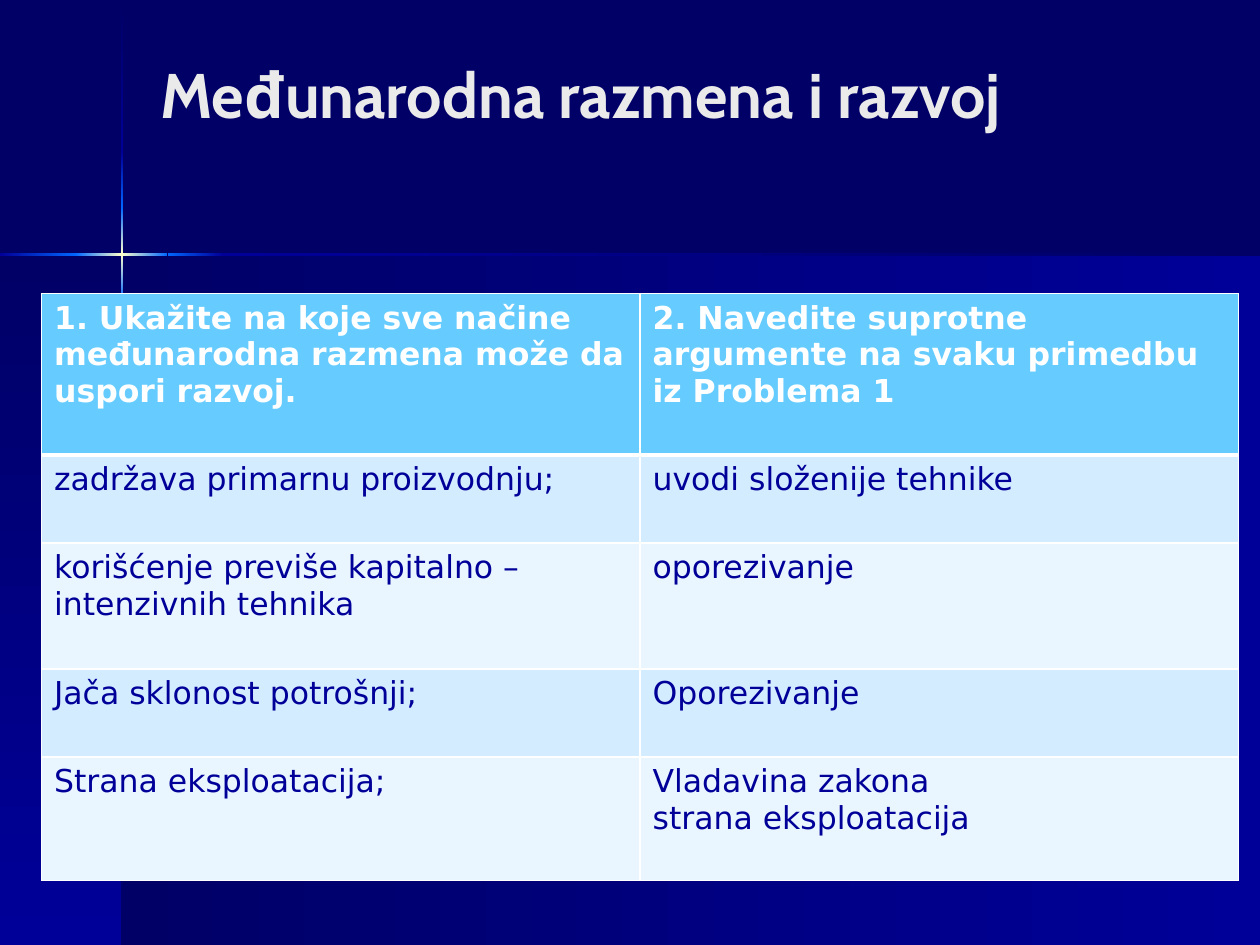
from copy import deepcopy
from pptx import Presentation
from pptx.dml.color import RGBColor
from pptx.enum import shapes, text
from pptx.oxml import ns
from pptx.util import Inches, Pt
from lxml import etree

NAVY = RGBColor(0x00, 0x00, 0x66)
BLUE = RGBColor(0x00, 0x00, 0x99)
AZURE = RGBColor(0x00, 0x66, 0xFF)
CREAM = RGBColor(0xFF, 0xFF, 0xCC)
WHITE = RGBColor(0xFF, 0xFF, 0xFF)
SILVER = RGBColor(0xEA, 0xEA, 0xEA)
SKY = RGBColor(0x66, 0xCC, 0xFF)
PALE = RGBColor(0xD3, 0xEC, 0xFF)
MIST = RGBColor(0xEA, 0xF6, 0xFF)


def write(frame, words, size=18, font="DejaVu Sans", color=BLUE, bold=False):
    frame.text = words
    para = frame.paragraphs[0]
    para.alignment = text.PP_ALIGN.LEFT
    for run in para.runs:
        run.font.size = Pt(size)
        run.font.name = font
        run.font.color.rgb = color
        run.font.bold = bold


def edge(cell, side, width):
    line = etree.SubElement(cell._tc.get_or_add_tcPr(), ns.qn("a:" + side), w=str(Pt(width)))
    fill = etree.SubElement(line, ns.qn("a:solidFill"))
    etree.SubElement(fill, ns.qn("a:srgbClr"), val=str(WHITE))


deck = Presentation()
deck.slide_width, deck.slide_height = Inches(10), Inches(7.5)
slide = deck.slides.add_slide(deck.slide_layouts[5])
back = slide.background.fill
back.solid()
back.fore_color.rgb = NAVY

glow = [AZURE, CREAM, AZURE]
bars = [
    (0.97, 2.02, 9.03, 5.48, 0, [NAVY, BLUE]),
    (0, 2.02, 0.97, 5.48, 90, [NAVY, BLUE]),
    (0.96, 0.01, 0.02, 1.2, 90, [NAVY, BLUE]),
    (0.96, 2.82, 0.02, 4.68, 90, [BLUE, NAVY]),
    (1.77, 2.01, 8.23, 0.02, 0, [BLUE, NAVY]),
    (0.96, 2.38, 0.02, 0.44, 90, [AZURE, BLUE]),
    (0.96, 1.21, 0.02, 0.44, 90, [BLUE, AZURE]),
    (0.96, 1.65, 0.02, 0.73, 90, glow),
    (0, 2.01, 0.61, 0.02, 0, [BLUE, AZURE]),
    (1.33, 2.01, 0.44, 0.02, 0, [AZURE, BLUE]),
    (0.6, 2.01, 0.73, 0.02, 0, glow),
]
for *box, angle, tones in bars:
    bar = slide.shapes.add_shape(shapes.MSO_SHAPE.RECTANGLE, *map(Inches, box))
    bar.shadow.inherit = False
    bar.line.fill.background()
    bar.fill.gradient()
    bar.fill.gradient_angle = -angle % 360
    stops = bar.element.spPr.find(".//" + ns.qn("a:gsLst"))
    if len(tones) == 3:
        stops.append(deepcopy(stops[0]))
    for i, (stop, tone) in enumerate(zip(bar.fill.gradient_stops, tones)):
        stop.position = i / (len(tones) - 1)
        stop.color.rgb = tone

title = slide.shapes.title
title.left, title.top = Inches(1.17), Inches(0.33)
title.width, title.height = Inches(8.25), Inches(1.57)
frame = title.text_frame
write(frame, "Međunarodna razmena i razvoj", size=36, font="Cabin", color=SILVER, bold=True)
frame.auto_size = text.MSO_AUTO_SIZE.NONE
frame.vertical_anchor = text.MSO_ANCHOR.TOP
frame.margin_top = Inches(0.11)

rows = [
    (1.28, "1. Ukažite na koje sve načine međunarodna razmena može da uspori razvoj.",
     "2. Navedite suprotne argumente na svaku primedbu iz Problema 1"),
    (0.7, "zadržava primarnu proizvodnju;", "uvodi složenije tehnike"),
    (1, "korišćenje previše kapitalno –intenzivnih tehnika", "oporezivanje"),
    (0.7, "Jača sklonost potrošnji;", "Oporezivanje"),
    (0.98, "Strana eksploatacija;", "Vladavina zakona\vstrana eksploatacija"),
]
table = slide.shapes.add_table(
    len(rows), 2, Inches(0.33), Inches(2.33), Inches(9.5), Inches(4.66)).table
for r, (height, *words) in enumerate(rows):
    table.rows[r].height = Inches(height)
    head = r == 0
    for c, word in enumerate(words):
        cell = table.cell(r, c)
        write(cell.text_frame, word, color=WHITE if head else BLUE, bold=head)
        edge(cell, "lnL", 1)
        edge(cell, "lnR", 1)
        edge(cell, "lnT", 3 if r == 1 else 1)
        edge(cell, "lnB", 3 if head else 1)
        cell.fill.solid()
        cell.fill.fore_color.rgb = SKY if head else (MIST, PALE)[r % 2]

deck.save("out.pptx")
